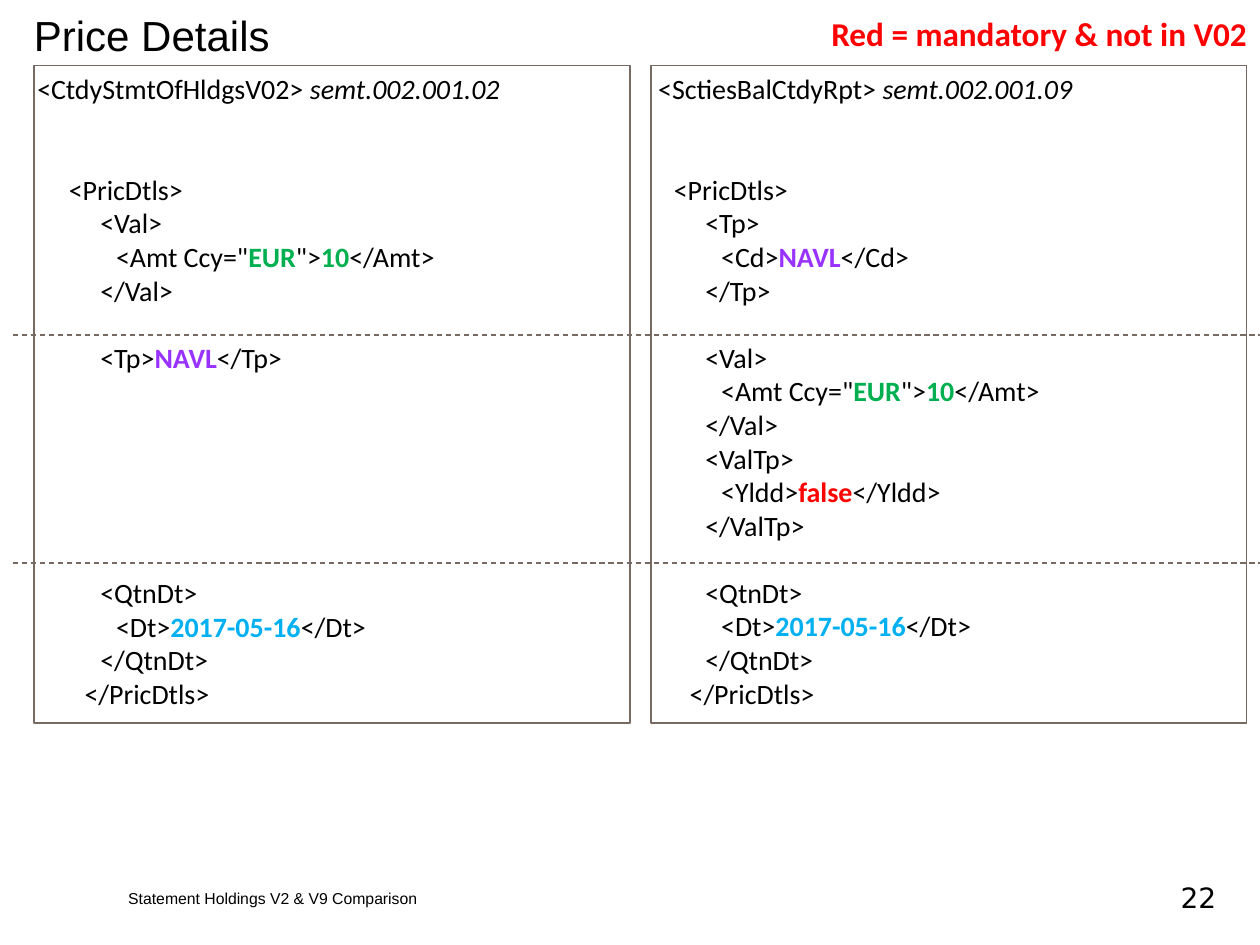
from lxml import etree
from pptx import Presentation
from pptx.dml.color import RGBColor
from pptx.enum.dml import MSO_LINE
from pptx.enum.shapes import MSO_CONNECTOR, MSO_SHAPE
from pptx.enum.text import MSO_ANCHOR, PP_ALIGN
from pptx.oxml.ns import qn
from pptx.util import Pt

RECT = MSO_SHAPE.RECTANGLE
LINE = MSO_CONNECTOR.STRAIGHT
DASH = MSO_LINE.DASH
TOP, MID = MSO_ANCHOR.TOP, MSO_ANCHOR.MIDDLE
LEFT, RIGHT = PP_ALIGN.LEFT, PP_ALIGN.RIGHT

COLORS = {
    "black": "000000", "white": "FFFFFF", "rule": "766A62",
    "price": "00B050", "type": "9933FF", "date": "00B0F0", "new": "FF0000",
}
ROW = 19.2   # height of one line of code
STEP = 9     # distance between tab stops
Y, H = 37.4, 375.8  # top and height of both panels

# Each line: blank rows before it, tabs, then text or (text, style) parts
AMOUNT = (0, 5, '<Amt Ccy="', ("EUR", "price"), '">', ("10", "price"), "</Amt>")
QUOTE = [
    (0, 5, "<Dt>", ("2017-05-16", "date"), "</Dt>"),
    (0, 4, "</QtnDt>"),
    (0, 3, "</PricDtls>"),
]
OLD = [
    (0, 0, "<CtdyStmtOfHldgsV02> ", ("semt.002.001.02", "italic")),
    (2, 2, "<PricDtls>"),
    (0, 4, "<Val>"),
    AMOUNT,
    (0, 4, "</Val>"),
    (1, 4, "<Tp>", ("NAVL", "type"), "</Tp>"),
    (6, 4, "<QtnDt>"),
    *QUOTE,
]
NEW = [
    (0, 1, "<SctiesBalCtdyRpt> ", ("semt.002.001.09", "italic")),
    (2, 2, "<PricDtls>"),
    (0, 4, "<Tp>"),
    (0, 5, "<Cd>", ("NAVL", "type"), "</Cd>"),
    (0, 4, "</Tp>"),
    (1, 4, "<Val>"),
    AMOUNT,
    (0, 4, "</Val>"),
    (0, 4, "<ValTp>"),
    (0, 5, "<Yldd>", ("false", "new"), "</Yldd>"),
    (0, 4, "</ValTp>"),
    (1, 4, "<QtnDt>"),
    *QUOTE,
]


def rgb(name):
    return RGBColor.from_string(COLORS[name])


def set_font(font, face, size, color="black", bold=False):
    font.name, font.size, font.bold = face, Pt(size), bold
    font.color.rgb = rgb(color)


def place(shape, x, y, w, h):
    shape.left, shape.top, shape.width, shape.height = Pt(x), Pt(y), Pt(w), Pt(h)


def add_box(slide, x, y, w, h):
    return slide.shapes.add_textbox(Pt(x), Pt(y), Pt(w), Pt(h)).text_frame


def write(frame, text, face, size, color="black", bold=False,
          align=LEFT, anchor=MID, wrap=True):
    frame.word_wrap, frame.vertical_anchor = wrap, anchor
    para = frame.paragraphs[0]
    para.text, para.alignment = text, align
    set_font(para.font, face, size, color, bold)


def add_panel(slide, x):
    panel = slide.shapes.add_shape(RECT, Pt(x), Pt(Y), Pt(340.5), Pt(H))
    panel.shadow.inherit = False
    panel.fill.solid()
    panel.fill.fore_color.rgb = rgb("white")
    panel.line.color.rgb = rgb("rule")
    panel.line.width = Pt(0.75)


def add_tabs(para):
    stops = etree.SubElement(para._p.get_or_add_pPr(), qn("a:tabLst"))
    for n in range(1, 9):
        etree.SubElement(stops, qn("a:tab"), pos=str(Pt(n * STEP)), algn="l")


def add_code(slide, x, w, lines):
    frame = add_box(slide, x, Y, w, H)
    frame.word_wrap = True
    for i, (gap, depth, first, *rest) in enumerate(lines):
        para = frame.add_paragraph() if i else frame.paragraphs[0]
        add_tabs(para)
        set_font(para.font, "Calibri", 16)
        if gap:
            para.space_before = Pt(gap * ROW)
        for part in ["\t" * depth + first, *rest]:
            text, style = (part, None) if isinstance(part, str) else part
            run = para.add_run()
            run.text = text
            if style == "italic":
                run.font.italic = True
            elif style:
                run.font.bold = True
                run.font.color.rgb = rgb(style)


def add_rule(slide, y):
    rule = slide.shapes.add_connector(LINE, Pt(7.2), Pt(y), Pt(720), Pt(y))
    rule.line.color.rgb = rgb("rule")
    rule.line.width = Pt(0.75)
    rule.line.dash_style = DASH
    etree.SubElement(rule._element.spPr, qn("a:effectLst"))


def main():
    deck = Presentation()
    deck.slide_width, deck.slide_height = Pt(720), Pt(540)
    slide = deck.slides.add_slide(deck.slide_layouts[5])

    # Title and footer
    title = slide.shapes.title
    place(title, 12.2, 0, 700.6, 40)
    write(title.text_frame, "Price Details", "Arial", 24)
    write(add_box(slide, 66.2, 504, 447, 18),
          "Statement Holdings V2 & V9 Comparison", "Arial", 9)
    write(add_box(slide, 642.2, 504, 59.8, 18), "22", "DejaVu Sans", 16,
          align=RIGHT)

    # Message panels, then the code on top
    for x in (19.5, 372):
        add_panel(slide, x)
    add_code(slide, 14.2, 345.8, OLD)
    add_code(slide, 360, 360, NEW)

    # Section rules and colour key
    for y in (191.5, 321.8):
        add_rule(slide, y)
    write(add_box(slide, 468, 4.3, 255, 30), "Red = mandatory & not in V02",
          "Calibri", 19, "new", True, anchor=TOP, wrap=False)

    deck.save("out.pptx")


if __name__ == "__main__":
    main()
